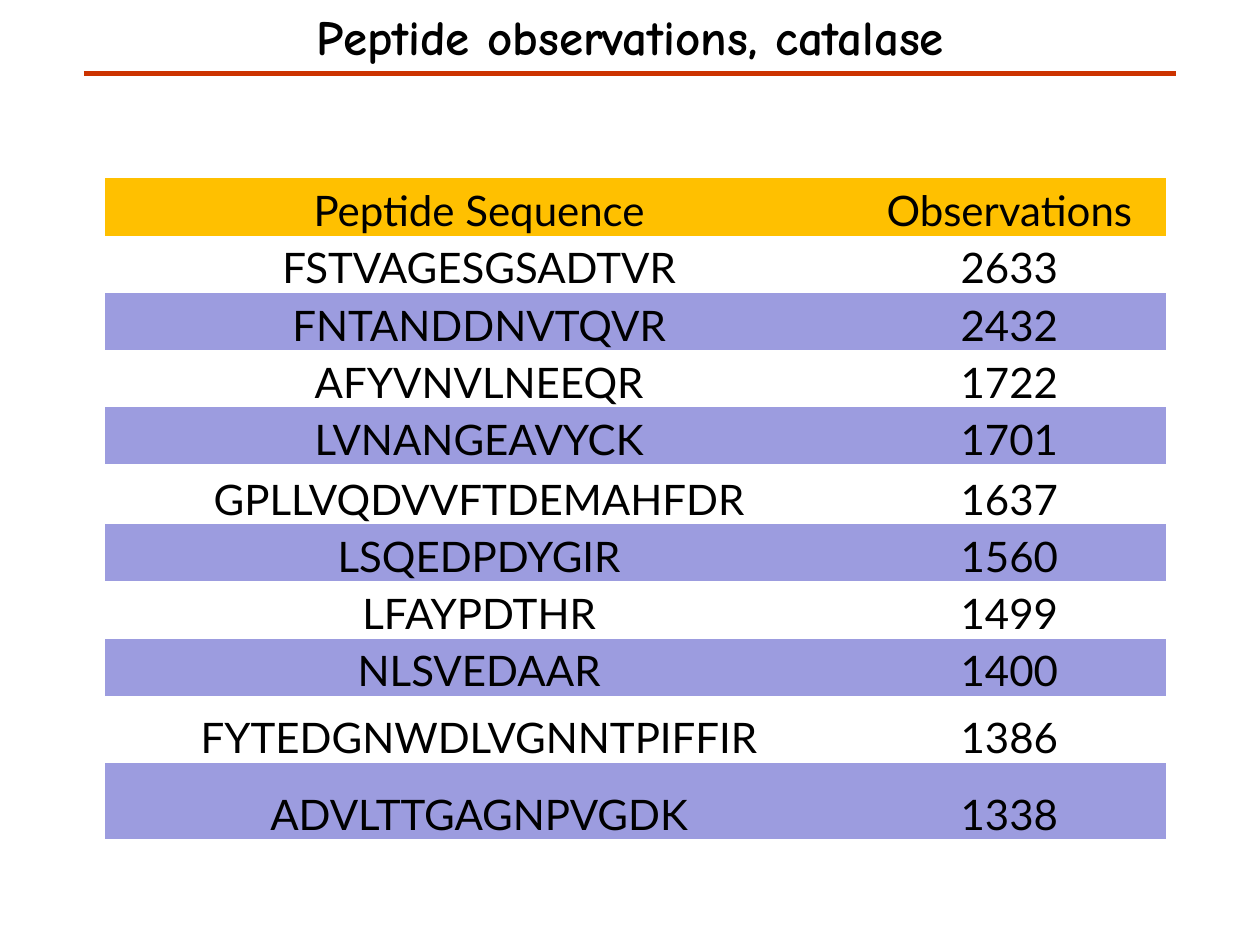
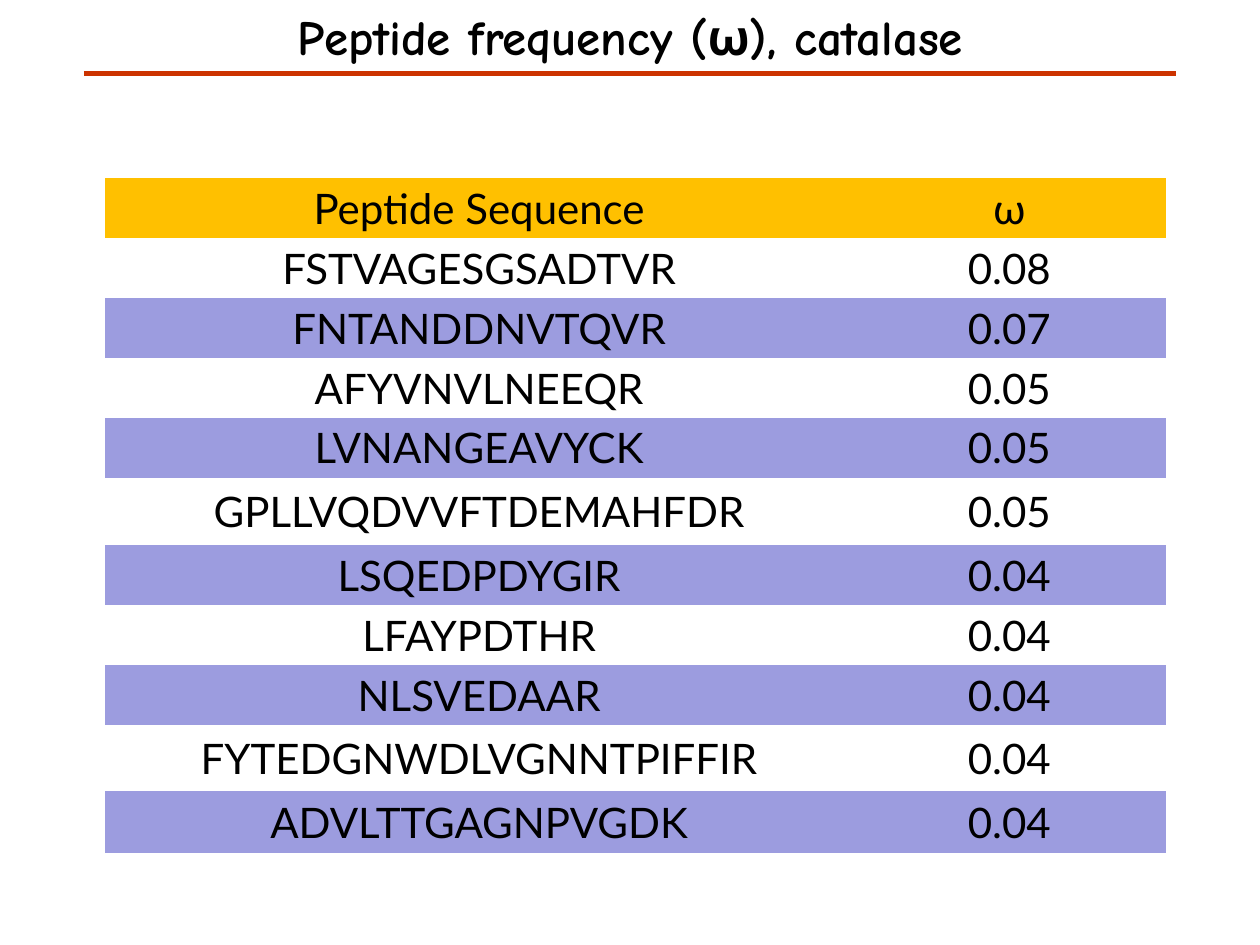
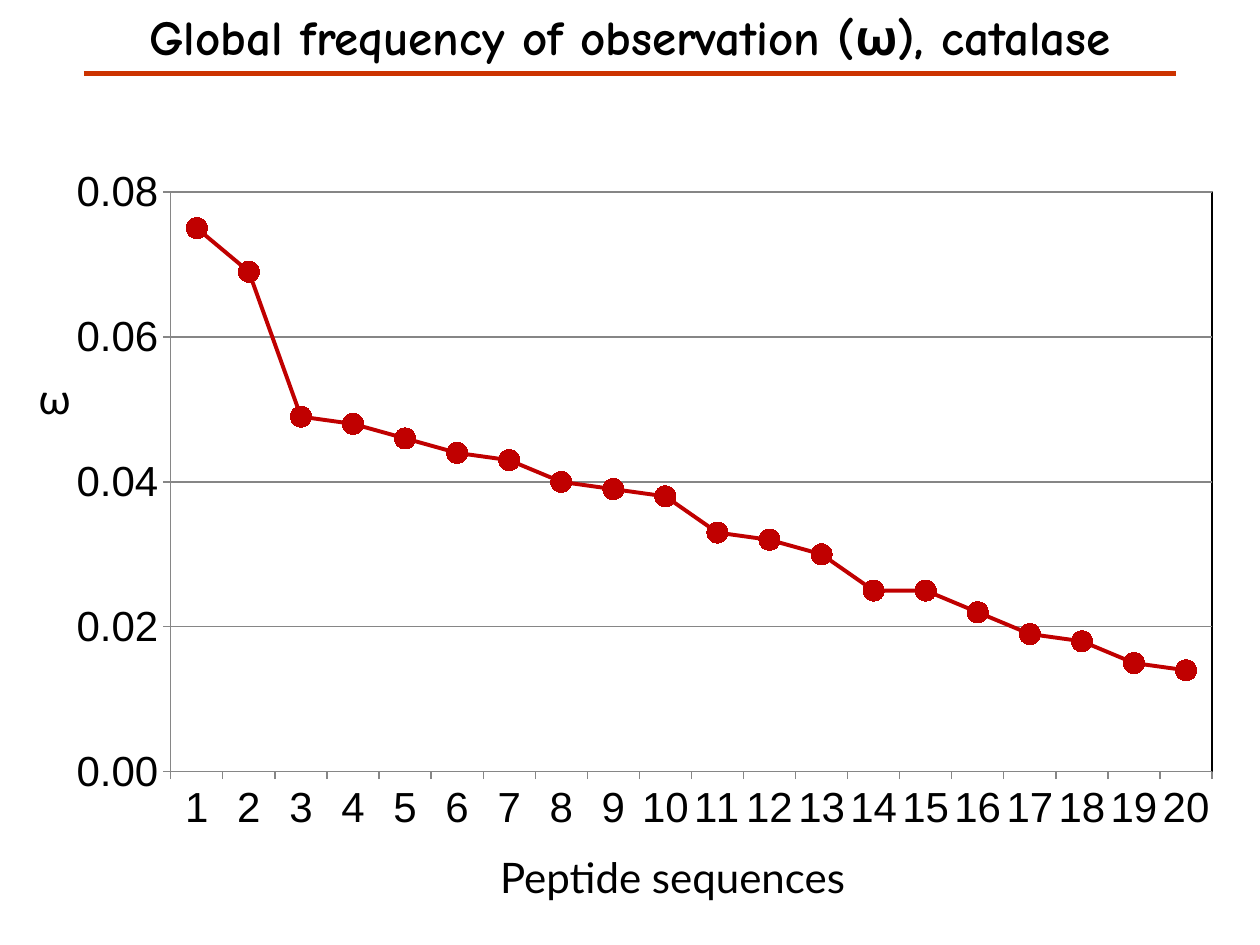
"""Build three slides on catalase peptide observations and their frequencies."""
from lxml import etree
from pptx import Presentation
from pptx.chart.data import CategoryChartData
from pptx.dml.color import RGBColor
from pptx.enum.chart import XL_CHART_TYPE, XL_MARKER_STYLE, XL_TICK_MARK
from pptx.enum.shapes import MSO_CONNECTOR
from pptx.enum.text import MSO_ANCHOR, MSO_AUTO_SIZE, PP_ALIGN
from pptx.oxml import parse_xml
from pptx.oxml.ns import nsdecls, qn
from pptx.util import Inches, Pt

CENTER, LEFT = PP_ALIGN.CENTER, PP_ALIGN.LEFT
BOTTOM, MIDDLE = MSO_ANCHOR.BOTTOM, MSO_ANCHOR.MIDDLE
FIT_SHAPE = MSO_AUTO_SIZE.SHAPE_TO_FIT_TEXT
STRAIGHT = MSO_CONNECTOR.STRAIGHT
LINE_MARKERS = XL_CHART_TYPE.LINE_MARKERS
CIRCLE = XL_MARKER_STYLE.CIRCLE
TICK_OUT = XL_TICK_MARK.OUTSIDE

COLORS = {
    "text": "000000",
    "rule": "CC3300",
    "header": "FFC000",
    "band": "9C9CDF",
    "series": "C00000",
    "axis": "868686",
}
TITLE_FONT, BODY_FONT, CHART_FONT = "Comic Neue", "Lato", "Arial"
TITLE_SIZE, BODY_SIZE = 28, 24
SLIDE_WIDTH, SLIDE_HEIGHT = Inches(10), Inches(7.5)
COLUMNS = 24
PLAIN_TABLE_STYLE = "{2D5ABB26-0587-4C30-8999-92F81FD0307C}"
TABLE_COLUMNS = [14.25, 5.95]

PEPTIDES = [
    "FSTVAGESGSADTVR", "FNTANDDNVTQVR", "AFYVNVLNEEQR", "LVNANGEAVYCK",
    "GPLLVQDVVFTDEMAHFDR", "LSQEDPDYGIR", "LFAYPDTHR", "NLSVEDAAR",
    "FYTEDGNWDLVGNNTPIFFIR", "ADVLTTGAGNPVGDK",
]
OBSERVATIONS = [2633, 2432, 1722, 1701, 1637, 1560, 1499, 1400, 1386, 1338]
FREQUENCIES = [0.08, 0.07, 0.05, 0.05, 0.05, 0.04, 0.04, 0.04, 0.04, 0.04]
GLOBAL_FREQUENCIES = [
    0.075, 0.069, 0.049, 0.048, 0.046, 0.044, 0.043, 0.04, 0.039, 0.038,
    0.033, 0.032, 0.03, 0.025, 0.025, 0.022, 0.019, 0.018, 0.015, 0.014,
]


def grid(*units):
    """Turn grid units into slide lengths."""
    return [round(SLIDE_WIDTH * unit / COLUMNS) for unit in units]


def color(name):
    """Look up a palette colour."""
    return RGBColor.from_string(COLORS[name])


def style_font(font, name, size, bold=False):
    """Apply typeface, size and text colour."""
    font.name, font.size, font.bold = name, Pt(size), bold
    font.color.rgb = color("text")


def write(paragraph, text, align=LEFT, font=BODY_FONT, size=BODY_SIZE, bold=False):
    """Add one styled run to a paragraph."""
    paragraph.alignment = align
    run = paragraph.add_run()
    run.text = text
    style_font(run.font, font, size, bold)


def add_text(slide, box, text, wrap=False, **style):
    """Add a text box on the grid."""
    frame = slide.shapes.add_textbox(*grid(*box)).text_frame
    frame.word_wrap = wrap
    frame.auto_size = FIT_SHAPE
    write(frame.paragraphs[0], text, **style)


def add_titled_slide(presentation, title):
    """Add a blank slide with the shared title and rule."""
    slide = presentation.slides.add_slide(presentation.slide_layouts[6])
    add_text(slide, (0, 0, COLUMNS, 1.37), title, wrap=True, align=CENTER,
             font=TITLE_FONT, size=TITLE_SIZE, bold=True)
    rule = slide.shapes.add_connector(STRAIGHT, *grid(1.6, 1.4, 22.4, 1.4))
    rule.line.color.rgb = color("rule")
    rule.line.width = Pt(2.5)
    etree.SubElement(rule.element.spPr, qn("a:effectLst"))
    return slide


def fill_cell(cell, text, row_index, anchor, spacing):
    """Write a cell and colour it by its row."""
    cell.margin_left = cell.margin_right = cell.margin_top = cell.margin_bottom = 0
    cell.vertical_anchor = anchor
    paragraph = cell.text_frame.paragraphs[0]
    paragraph.space_before = paragraph.space_after = Pt(spacing)
    write(paragraph, text, align=CENTER)
    if row_index % 2:
        cell.fill.background()
    else:
        cell.fill.solid()
        cell.fill.fore_color.rgb = color("band" if row_index else "header")


def add_peptide_table(slide, heading, values, heights, anchor, spacing=0):
    """Add a banded table of peptides and one value each."""
    rows = [("Peptide Sequence", heading), *zip(PEPTIDES, map(str, values))]
    box = grid(2, 3.4, sum(TABLE_COLUMNS), sum(heights))
    shape = slide.shapes.add_table(len(rows), len(TABLE_COLUMNS), *box)
    table = shape.table
    table.first_row = table.horz_banding = False
    shape.element.xpath(".//a:tableStyleId")[0].text = PLAIN_TABLE_STYLE
    for column, width in zip(table.columns, grid(*TABLE_COLUMNS)):
        column.width = width
    for row_index, (texts, height) in enumerate(zip(rows, grid(*heights))):
        table.rows[row_index].height = height
        for column_index, text in enumerate(texts):
            fill_cell(table.cell(row_index, column_index), text, row_index, anchor, spacing)


def style_axis(axis):
    """Give an axis its labels, ticks and line."""
    style_font(axis.tick_labels.font, CHART_FONT, BODY_SIZE)
    axis.major_tick_mark = TICK_OUT
    axis.format.line.color.rgb = color("axis")
    axis.format.line.width = Pt(0.75)


def frame_plot(chart):
    """Place and outline the plot area and show every category label."""
    plot_area = chart.element.xpath(".//c:plotArea")[0]
    for layout in plot_area.findall(qn("c:layout")):
        plot_area.remove(layout)
    shares = {"x": 0.1, "y": 0.05, "w": 0.88, "h": 0.84}
    parts = "".join(f'<c:{key}Mode val="edge"/>' for key in "xy")
    parts += "".join(f'<c:{key} val="{share}"/>' for key, share in shares.items())
    plot_area.insert(0, parse_xml(
        f'<c:layout {nsdecls("c")}><c:manualLayout><c:layoutTarget val="inner"/>'
        f'{parts}</c:manualLayout></c:layout>'))
    plot_area.append(parse_xml(
        f'<c:spPr {nsdecls("c", "a")}><a:noFill/><a:ln w="9525"><a:solidFill>'
        f'<a:srgbClr val="{COLORS["text"]}"/></a:solidFill></a:ln></c:spPr>'))
    category_axis = plot_area.find(qn("c:catAx"))
    category_axis.find(qn("c:lblOffset")).addnext(
        parse_xml(f'<c:tickLblSkip {nsdecls("c")} val="1"/>'))
    category_axis.xpath("./c:txPr/a:bodyPr")[0].set("rot", "0")


def add_frequency_chart(slide, values):
    """Add the line chart of frequency by peptide rank."""
    data = CategoryChartData()
    data.categories = [str(rank) for rank in range(1, len(values) + 1)]
    data.add_series("Series 1", values)
    box = grid(1, 3, 22.54, 13.15)
    chart = slide.shapes.add_chart(LINE_MARKERS, *box, data).chart
    chart.has_legend = chart.has_title = False
    style_font(chart.font, CHART_FONT, 10)
    style_axis(chart.category_axis)

    value_axis = chart.value_axis
    style_axis(value_axis)
    value_axis.minimum_scale, value_axis.maximum_scale = 0, 0.08
    value_axis.major_unit = 0.02
    value_axis.tick_labels.number_format = "#,##0.00"
    value_axis.tick_labels.number_format_is_linked = False
    value_axis.has_major_gridlines = True
    value_axis.major_gridlines.format.line.color.rgb = color("axis")
    value_axis.major_gridlines.format.line.width = Pt(0.75)

    chart.plots[0].vary_by_categories = False
    series = chart.plots[0].series[0]
    series.smooth = False
    series.format.line.color.rgb = color("series")
    series.format.line.width = Pt(2.25)
    series.marker.style, series.marker.size = CIRCLE, 12
    series.marker.format.fill.solid()
    series.marker.format.fill.fore_color.rgb = color("series")
    series.marker.format.line.color.rgb = color("series")
    frame_plot(chart)


def main():
    """Build and save the presentation."""
    presentation = Presentation()
    presentation.slide_width, presentation.slide_height = SLIDE_WIDTH, SLIDE_HEIGHT

    slide = add_titled_slide(presentation, "Peptide observations, catalase")
    heights = [1.09] * 5 + [1.14] + [1.09] * 3 + [1.27, 1.46]
    add_peptide_table(slide, "Observations", OBSERVATIONS, heights, BOTTOM)

    slide = add_titled_slide(presentation, "Peptide frequency (ω), catalase")
    heights = [1.14] * 5 + [1.29] + [1.14] * 3 + [1.26, 1.19]
    add_peptide_table(slide, "ω", FREQUENCIES, heights, MIDDLE, spacing=6)

    slide = add_titled_slide(presentation, "Global frequency of observation (ω), catalase")
    add_frequency_chart(slide, GLOBAL_FREQUENCIES)
    add_text(slide, (0.5, 6.98, 1.08, 1.2), "ω")
    add_text(slide, (9.29, 16.1, 7.08, 1.2), "Peptide sequences")

    presentation.save("out.pptx")


if __name__ == "__main__":
    main()
